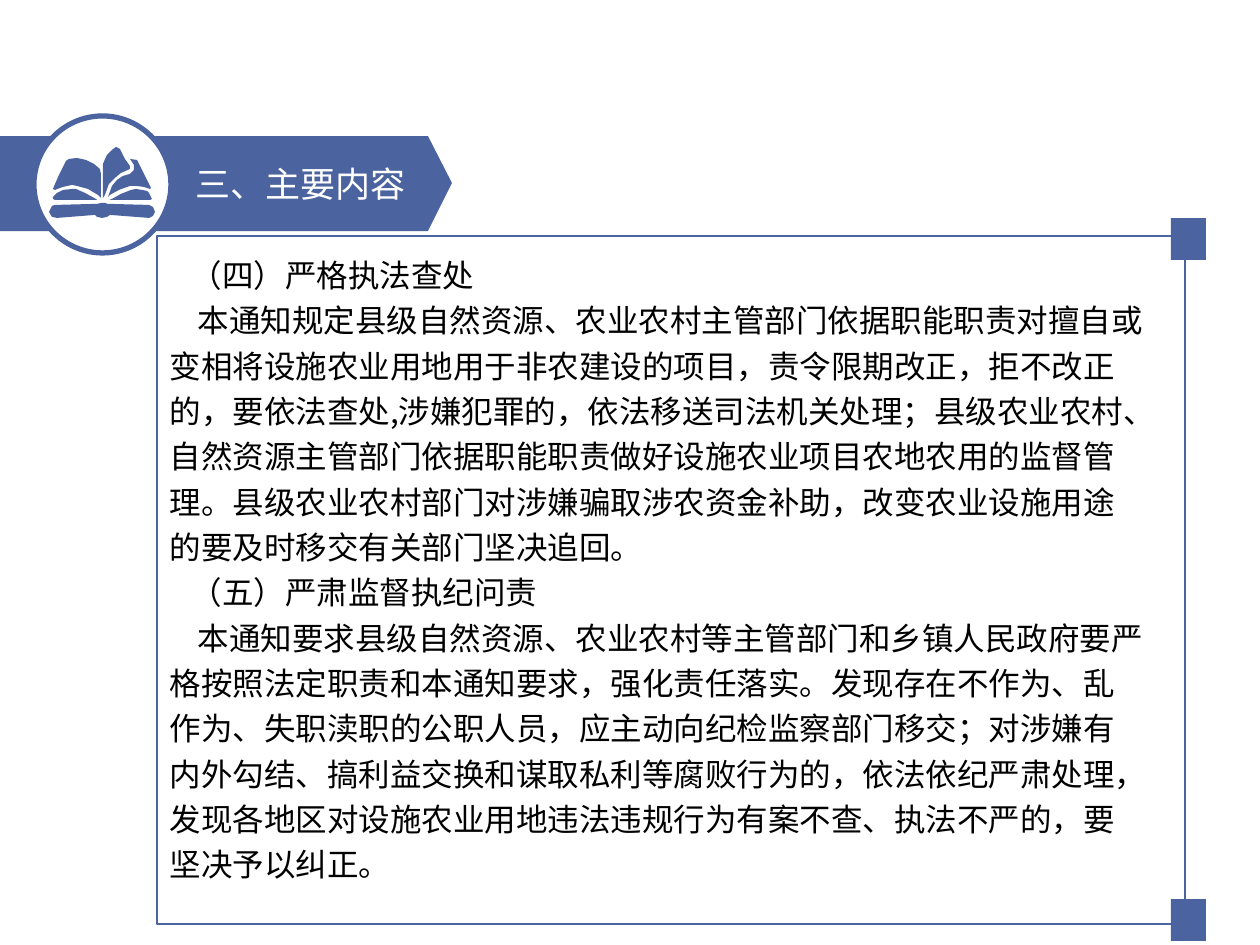
from lxml import etree
from pptx import Presentation
from pptx import util as u
from pptx.dml.color import RGBColor
from pptx.enum import shapes, text
from pptx.oxml.ns import qn

BLUE, WHITE, BLACK = "4B649F", "FFFFFF", "000000"
CJK_FONT = "Noto Sans CJK SC"

BOOK_PARTS = [
    # left leaf
    [(100, 169), (101, 174), (101, 198), (98, 195), (88, 189), (77, 186), (72, 185), (63, 187),
     (55, 190), (53, 189), (59, 175), (66, 161), (69, 159), (77, 158), (86, 160), (94, 164)],
    # turning leaf
    [(103, 169), (103, 164), (107, 155), (112, 150), (116, 147), (120, 149), (125, 159), (130, 166),
     (130, 169), (128, 170), (121, 173), (115, 178), (109, 184), (105, 195), (103, 198)],
    # right leaf
    [(151, 188), (147, 180), (139, 164), (137, 160), (130, 159), (134, 165), (134, 170), (130, 174),
     (123, 176), (117, 180), (112, 186), (108, 197), (110, 195), (119, 190), (130, 186), (136, 186),
     (144, 187), (150, 189)],
    # lower right pages
    [(149, 193), (147, 191), (142, 190), (136, 189), (131, 190), (121, 194), (112, 199), (109, 200),
     (150, 200), (152, 199), (151, 197)],
    # lower left pages
    [(96, 199), (85, 193), (76, 189), (72, 189), (63, 190), (57, 193), (53, 197), (53, 199),
     (55, 200), (97, 200)],
    # cover and spine
    [(149, 218), (110, 215), (107, 217), (102, 218), (97, 217), (95, 215), (57, 218), (52, 217),
     (49, 212), (52, 206), (55, 205), (93, 204), (97, 204), (101, 203), (105, 203), (108, 204),
     (112, 204), (149, 205), (153, 207), (155, 212), (153, 216)],
]

# (first-line indent in px, wording)
PARAGRAPHS = [
    (21, "（四）严格执法查处"),
    (28, "本通知规定县级自然资源、农业农村主管部门依据职能职责对擅自或变相将设施农业用地用于非农建设的项目，"
         "责令限期改正，拒不改正的，要依法查处,涉嫌犯罪的，依法移送司法机关处理；县级农业农村、自然资源主管部门"
         "依据职能职责做好设施农业项目农地农用的监督管理。县级农业农村部门对涉嫌骗取涉农资金补助，"
         "改变农业设施用途的要及时移交有关部门坚决追回。"),
    (21, "（五）严肃监督执纪问责"),
    (28, "本通知要求县级自然资源、农业农村等主管部门和乡镇人民政府要严格按照法定职责和本通知要求，强化责任落实。"
         "发现存在不作为、乱作为、失职渎职的公职人员，应主动向纪检监察部门移交；对涉嫌有内外勾结、"
         "搞利益交换和谋取私利等腐败行为的，依法依纪严肃处理，发现各地区对设施农业用地违法违规行为有案不查、"
         "执法不严的，要坚决予以纠正。"),
]


def px(length):
    return u.Emu(round(length * 914400 / 126))


def color(value):
    return RGBColor.from_string(value)


class SlideBuilder:
    def __init__(self, page):
        self.page = page

    def paint(self, shape, fill=None, line=None, weight=1):
        shape.shadow.inherit = False
        if fill:
            shape.fill.solid()
            shape.fill.fore_color.rgb = color(fill)
        else:
            shape.fill.background()
        if line:
            shape.line.color.rgb = color(line)
            shape.line.width = u.Pt(weight)
        else:
            shape.line.fill.background()

    def preset(self, kind, left, top, width, height, **paint):
        shape = self.page.shapes.add_shape(kind, px(left), px(top), px(width), px(height))
        self.paint(shape, **paint)

    def outline(self, points, parent=None):
        parent = parent or self.page
        builder = parent.shapes.build_freeform(*points[0], scale=914400 / 126)
        builder.add_line_segments(points[1:], close=True)
        self.paint(builder.convert_to_shape(), fill=BLUE)

    def placeholder(self, box, left, top, width, height, anchor, wrap):
        """Move a placeholder to its place, in front of the shapes drawn so far."""
        box.left, box.top, box.width, box.height = map(px, (left, top, width, height))
        box.element.getparent().append(box.element)
        frame = box.text_frame
        frame.margin_left = frame.margin_right = u.Inches(0.1)
        frame.margin_top = frame.margin_bottom = u.Inches(0.05)
        frame.vertical_anchor = anchor
        frame.word_wrap = wrap
        frame.auto_size = text.MSO_AUTO_SIZE.NONE
        return frame

    def format(self, para, size, font, ink, spacing=1.0, indent=0):
        para.alignment = text.PP_ALIGN.LEFT
        para.line_spacing = spacing
        para.space_before = para.space_after = u.Pt(0)
        properties = para._p.get_or_add_pPr()
        properties.set("marL", "0")
        properties.set("indent", str(px(indent)))
        etree.SubElement(properties, qn("a:buNone"))
        for span in para.runs:
            span.font.size = u.Pt(size)
            span.font.name = font
            span.font.color.rgb = color(ink)
            run_properties = span._r.get_or_add_rPr()
            run_properties.set("lang", "zh-CN")
            etree.SubElement(run_properties, qn("a:ea"), typeface=CJK_FONT)

    def title(self, wording, *place):
        frame = self.placeholder(self.page.shapes.title, *place, text.MSO_ANCHOR.MIDDLE, False)
        frame.text = wording
        self.format(frame.paragraphs[0], 20, "Arial", WHITE)

    def body(self, paragraphs, *place):
        frame = self.placeholder(self.page.placeholders[1], *place, text.MSO_ANCHOR.TOP, True)
        frame.text = "\n".join(wording for _, wording in paragraphs)
        for para, (indent, _) in zip(frame.paragraphs, paragraphs):
            self.format(para, 18, CJK_FONT, BLACK, 1.2, indent)


def main():
    deck = Presentation()
    deck.slide_width, deck.slide_height = px(1260), px(945)
    page = deck.slides.add_slide(deck.slide_layouts[1])
    slide = SlideBuilder(page)
    kinds = shapes.MSO_SHAPE

    slide.outline([(0, 136), (428, 136), (452, 183), (428, 231), (0, 231)])
    slide.preset(kinds.OVAL, 34, 116, 137, 137, fill=WHITE, line=BLUE, weight=3)
    book = page.shapes.add_group_shape()
    for part in BOOK_PARTS:
        slide.outline(part, book)
    slide.title("三、主要内容", 183, 156, 236, 55)

    slide.preset(kinds.RECTANGLE, 157, 236, 1028, 688, line=BLUE)
    for top in (218, 899):
        slide.preset(kinds.RECTANGLE, 1171, top, 35, 42, fill=BLUE)
    slide.body(PARAGRAPHS, 157, 242, 1000, 654)
    deck.save("out.pptx")


if __name__ == "__main__":
    main()
